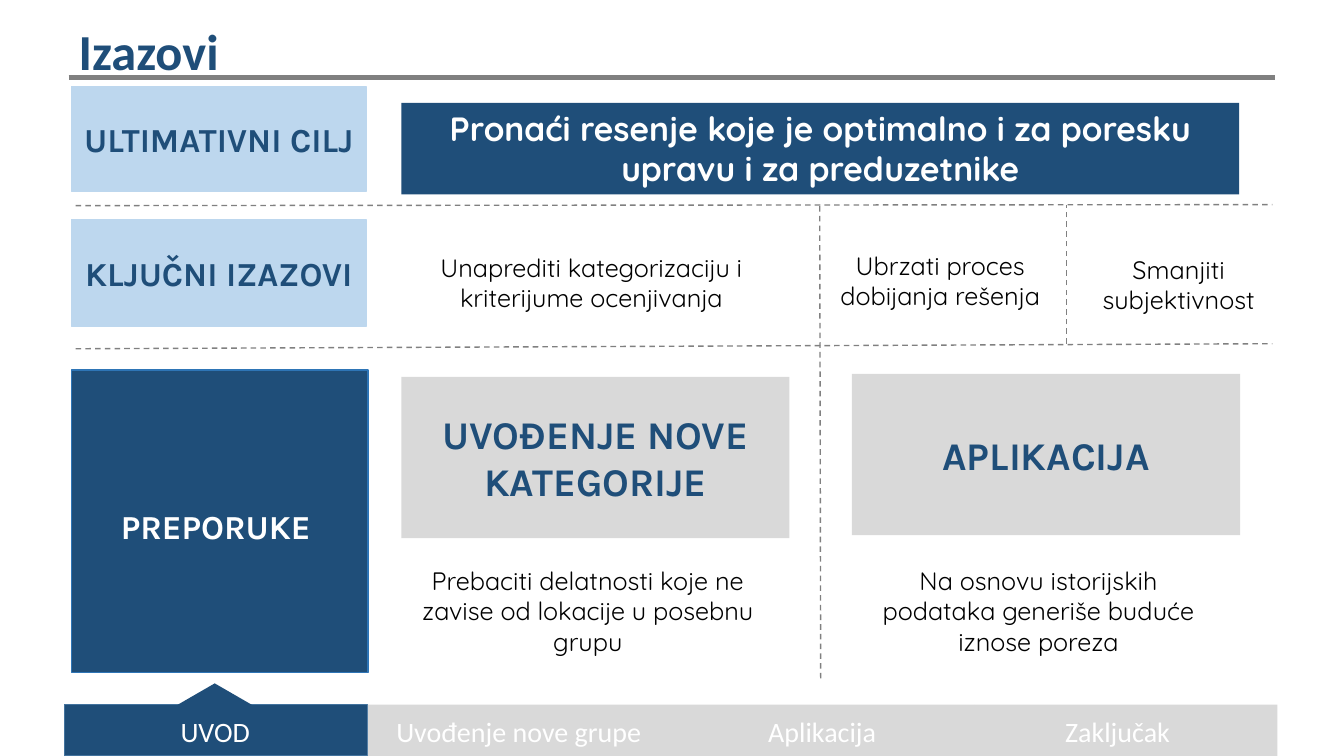
from collections import namedtuple

from lxml import etree
from pptx import Presentation
from pptx.dml.color import RGBColor
from pptx.enum.dml import MSO_LINE
from pptx.enum.shapes import MSO_CONNECTOR, MSO_SHAPE
from pptx.enum.text import MSO_ANCHOR, PP_ALIGN
from pptx.oxml.ns import qn
from pptx.util import Inches, Pt

Box = namedtuple("Box", "left top width height")
Style = namedtuple("Style", "font size color bold")

RECTANGLE, TRIANGLE = MSO_SHAPE.RECTANGLE, MSO_SHAPE.ISOSCELES_TRIANGLE
STRAIGHT, DASH = MSO_CONNECTOR.STRAIGHT, MSO_LINE.DASH
LEFT, CENTER = PP_ALIGN.LEFT, PP_ALIGN.CENTER
TOP, MIDDLE = MSO_ANCHOR.TOP, MSO_ANCHOR.MIDDLE

NAVY, PALE, SILVER, GRAY, WHITE = "1F4E79", "BDD7EE", "D9D9D9", "808080", "FFFFFF"
TITLE = Style("Calibri", 36, NAVY, True)
LABEL = Style("Karla", 24, NAVY, True)
CARD = Style("Karla", 28, NAVY, True)
BODY = Style("Quicksand", 18, "000000", False)
GOAL = Style("Quicksand", 24, WHITE, True)
TAB = Style("Calibri", 20, WHITE, False)

CONTENT_LEFT = 3.27
SECOND_LEFT = 7.74
LABEL_WIDTH = 2.92


def color(value):
    """Turn a hex string into a colour."""
    return RGBColor.from_string(value)


def inside(box, left, top, width, height):
    """Place a box relative to the corner of another."""
    return Box(box.left + left, box.top + top, width, height)


def emu(box):
    """Convert a box in inches to lengths."""
    return [Inches(value) for value in box]


def write(shape, text, style, align=CENTER, anchor=TOP, wrap=True):
    """Write one formatted run into a shape."""
    frame = shape.text_frame
    frame.word_wrap = wrap
    frame.vertical_anchor = anchor
    paragraph = frame.paragraphs[0]
    paragraph.alignment = align
    run = paragraph.add_run()
    run.text = text
    run.font.name = style.font
    run.font.size = Pt(style.size)
    run.font.bold = style.bold
    run.font.color.rgb = color(style.color)


def add_text(slide, box, text, style):
    """Add a centred text box."""
    write(slide.shapes.add_textbox(*emu(box)), text, style)


def add_block(slide, box, fill, outline=None, kind=RECTANGLE):
    """Add a flat filled shape."""
    shape = slide.shapes.add_shape(kind, *emu(box))
    shape.shadow.inherit = False
    shape.fill.solid()
    shape.fill.fore_color.rgb = color(fill)
    if outline:
        shape.line.color.rgb = color(outline)
        shape.line.width = Pt(1)
    else:
        shape.line.fill.background()
    return shape


def add_rule(slide, start, end, width=1, dash=DASH):
    """Add a gray straight line."""
    points = [Inches(value) for value in (*start, *end)]
    line = slide.shapes.add_connector(STRAIGHT, *points)
    line.line.color.rgb = color(GRAY)
    line.line.width = Pt(width)
    if dash:
        line.line.dash_style = dash
    etree.SubElement(line._element.spPr, qn("a:effectLst"))


def add_heading(slide, box):
    """Place the title and the line below it."""
    title = slide.shapes.title
    title.left, title.top, title.width, title.height = emu(inside(box, 0, 0, 1.6, 0.71))
    write(title, "Izazovi", TITLE, LEFT, wrap=False)
    bottom = box.top + box.height
    add_rule(slide, (box.left, bottom), (box.left + box.width, bottom), 3, None)


def add_label(slide, box, text):
    """Add the pale label at the left end of a row."""
    label = add_block(slide, inside(box, 0, 0, LABEL_WIDTH, box.height), PALE, PALE)
    write(label, text, LABEL, anchor=MIDDLE)


def add_goal(slide, box):
    """Build the row with the ultimate goal."""
    add_label(slide, box, "ULTIMATIVNI CILJ")
    banner = add_block(slide, inside(box, CONTENT_LEFT, 0.16, 8.31, 0.91), NAVY)
    write(banner, "Pronaći resenje koje je optimalno i za poresku upravu i za preduzetnike", GOAL)


def add_challenges(slide, box):
    """Build the row with the key challenges."""
    add_label(slide, box, "KLJUČNI IZAZOVI")
    challenges = [
        (3.41, 0.27, 3.49, "Unaprediti kategorizaciju i kriterijume ocenjivanja"),
        (7.41, 0.25, 2.41, "Ubrzati proces dobijanja rešenja"),
        (9.8, 0.29, 2.36, "Smanjiti subjektivnost"),
    ]
    for left, top, width, text in challenges:
        add_text(slide, inside(box, left, top, width, 0.71), text, BODY)


def add_recommendations(slide, box):
    """Build the block with the recommendations."""
    add_block(slide, inside(box, 0, 0, 2.94, box.height), NAVY, "2E75B6")
    add_text(slide, inside(box, 0.04, 1.3, 2.78, 0.5), "PREPORUKE", LABEL._replace(color=WHITE))
    cards = [
        (CONTENT_LEFT, 0.07, "UVOĐENJE NOVE KATEGORIJE",
         "Prebaciti delatnosti koje ne zavise od lokacije u posebnu grupu"),
        (SECOND_LEFT, 0.04, "APLIKACIJA",
         "Na osnovu istorijskih podataka generiše buduće iznose poreza"),
    ]
    for left, top, heading, detail in cards:
        card = add_block(slide, inside(box, left, top, 3.85, 1.6), SILVER)
        write(card, heading, CARD, anchor=MIDDLE)
        add_text(slide, inside(box, left, 1.89, 3.7, 1.01), detail, BODY)


def add_dividers(slide, box):
    """Draw the dashed lines between rows and columns."""
    right, middle = box.left + box.width, box.top + 1.38
    add_rule(slide, (box.left, box.top + 0.01), (right, box.top))
    add_rule(slide, (box.left, box.top + 1.43), (right, middle))
    add_rule(slide, (8.14, box.top + box.height), (8.13, box.top))
    add_rule(slide, (10.58, middle), (10.58, box.top))


def add_navigation(slide, box):
    """Build the tab bar with a pointer on the active tab."""
    tabs = [("UVOD", 0.43, 2.13), ("Uvođenje nove grupe", 3.18, 2.65),
            ("Aplikacija", 6.45, 2.13), ("Zaključak", 9.38, 2.13)]
    step = box.width / len(tabs)
    for index, (text, left, width) in enumerate(tabs):
        fill, outline = (SILVER, None) if index else (NAVY, "43739E")
        add_block(slide, inside(box, index * step, 0, step, box.height), fill, outline)
        add_text(slide, inside(box, left, 0.05, width, 0.44), text, TAB)
    add_block(slide, inside(box, 1.04, -0.21, 0.9, 0.26), NAVY, kind=TRIANGLE)


def main():
    """Build and save the presentation."""
    presentation = Presentation()
    presentation.slide_width, presentation.slide_height = Inches(13.33), Inches(7.5)
    slide = presentation.slides.add_slide(presentation.slide_layouts[5])
    add_heading(slide, Box(0.68, 0.15, 11.97, 0.62))
    add_dividers(slide, Box(0.75, 2.03, 11.87, 4.7))
    add_goal(slide, Box(0.71, 0.86, 11.58, 1.04))
    add_challenges(slide, Box(0.71, 2.18, 12.16, 1.06))
    add_recommendations(slide, Box(0.71, 3.67, 11.59, 3))
    add_navigation(slide, Box(0.64, 6.99, 12.03, 0.51))
    presentation.save("out.pptx")


if __name__ == "__main__":
    main()
